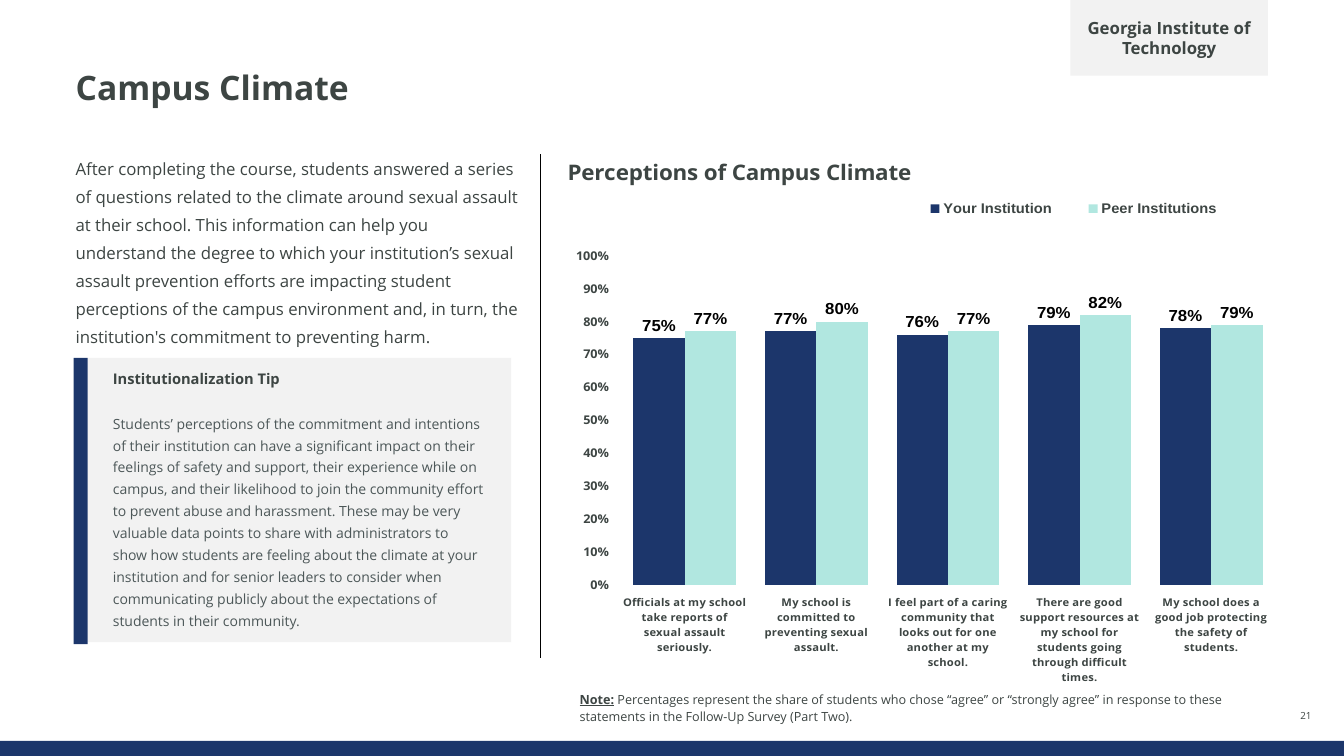
from dataclasses import dataclass, field
from typing import Any, Optional

from lxml.etree import SubElement
from pptx import Presentation
from pptx.chart.data import CategoryChartData
from pptx.dml.color import RGBColor
from pptx.enum.chart import XL_CHART_TYPE as ChartType
from pptx.enum.chart import XL_LABEL_POSITION as LabelPosition
from pptx.enum.chart import XL_LEGEND_POSITION as LegendPosition
from pptx.enum.shapes import MSO_CONNECTOR as Connector
from pptx.enum.shapes import MSO_SHAPE as Preset
from pptx.enum.text import MSO_ANCHOR as Anchor
from pptx.enum.text import MSO_AUTO_SIZE as AutoSize
from pptx.enum.text import PP_ALIGN as Align
from pptx.oxml import parse_xml
from pptx.oxml.ns import nsdecls, qn
from pptx.util import Inches, Pt

WIDTH, HEIGHT = Inches(13.333), Inches(7.5)
NAVY = RGBColor(0x1C, 0x36, 0x6B)
MINT = RGBColor(0xB1, 0xE7, 0xE0)
PALE = RGBColor(0xF2, 0xF2, 0xF2)
DARK = RGBColor(0x3D, 0x45, 0x43)
SLATE = RGBColor(0x4C, 0x57, 0x58)
BLACK = RGBColor(0, 0, 0)
SANS = "Open Sans"


@dataclass(frozen=True)
class Frame:
    """A rectangle in percent of the slide's width and height."""
    left: float
    top: float
    width: float
    height: float

    def lengths(self) -> tuple[int, int, int, int]:
        return (round(WIDTH * self.left / 100), round(HEIGHT * self.top / 100),
                round(WIDTH * self.width / 100), round(HEIGHT * self.height / 100))


@dataclass(frozen=True)
class Span:
    text: str
    size: float
    bold: bool = False
    color: RGBColor = DARK
    underline: bool = False


@dataclass(frozen=True)
class Para:
    spans: list[Span]
    format: dict[str, Any] = field(default_factory=dict)


@dataclass(frozen=True)
class Block:
    """A text box, or a filled rectangle when a fill is given."""
    frame: Frame
    paras: list[Para] = field(default_factory=list)
    fill: Optional[RGBColor] = None
    anchor: Anchor = Anchor.MIDDLE
    margins: tuple[float, float] = (0, 0)


@dataclass(frozen=True)
class Series:
    name: str
    values: list[float]
    color: RGBColor


TIGHT = {"alignment": Align.LEFT, "line_spacing": Pt(12), "space_after": Pt(2)}
BLOCKS = [
    Block(Frame(0, 98, 100, 2), fill=NAVY),
    Block(Frame(43.13, 90.8, 51.9, 4.93), [Para([
        Span("Note:", 9, True, underline=True),
        Span(" Percentages represent the share of students who chose “agree” or “strongly agree” "
             "in response to these statements in the Follow-Up Survey (Part Two).", 9),
    ], TIGHT)], anchor=Anchor.BOTTOM),
    Block(Frame(95.25, 93.47, 3.83, 2), [Para([Span("21", 7)], {"alignment": Align.CENTER})],
          anchor=Anchor.BOTTOM),
    Block(Frame(4.88, 19.33, 34.58, 27.2), [Para([Span(
        "After completing the course, students answered a series of questions related to the "
        "climate around sexual assault at their school. This information can help you understand "
        "the degree to which your institution’s sexual assault prevention efforts are impacting "
        "student perceptions of the campus environment and, in turn, the institution's commitment "
        "to preventing harm.", 12)], TIGHT | {"line_spacing": Pt(20)})],
        anchor=Anchor.TOP, margins=(0.1, 0.05)),
    Block(Frame(6.53, 47.33, 31.5, 37.6), [
        Para([Span("Institutionalization Tip", 10.5, True)], TIGHT | {"space_after": Pt(16)}),
        Para([Span(
            "Students’ perceptions of the commitment and intentions of their institution can have "
            "a significant impact on their feelings of safety and support, their experience while "
            "on campus, and their likelihood to join the community effort to prevent abuse and "
            "harassment. These may be very valuable data points to share with administrators to "
            "show how students are feeling about the climate at your institution and for senior "
            "leaders to consider when communicating publicly about the expectations of students "
            "in their community.", 10, color=SLATE)], TIGHT | {"line_spacing": 1.3}),
    ], PALE, margins=(0.25, 0)),
    Block(Frame(5.48, 47.33, 1.05, 37.87), fill=NAVY),
    Block(Frame(79.65, 0, 14.7, 10), [Para(
        [Span("Georgia Institute of Technology", 12, True)], {"alignment": Align.CENTER})],
        PALE, margins=(0.1, 0)),
]
STATEMENTS = [
    "Officials at my school take reports of sexual assault seriously.",
    "My school is committed to preventing sexual assault.",
    "I feel part of a caring community that looks out for one another at my school.",
    "There are good support resources at my school for students going through difficult times.",
    "My school does a good job protecting the safety of students.",
]
SERIES = [
    Series("Your Institution", [0.75, 0.77, 0.76, 0.79, 0.78], NAVY),
    Series("Peer Institutions", [0.77, 0.8, 0.77, 0.82, 0.79], MINT),
]


def set_all(target: Any, values: dict[str, Any]) -> None:
    for name, value in values.items():
        setattr(target, name, value)


def style_font(font: Any, size: float, bold: bool = True, color: RGBColor = DARK,
               name: str = SANS) -> None:
    set_all(font, {"name": name, "size": Pt(size), "bold": bold})
    font.color.rgb = color


def write(text_frame: Any, block: Block) -> None:
    side, end = map(Inches, block.margins)
    set_all(text_frame, {"word_wrap": True, "auto_size": AutoSize.NONE,
                         "vertical_anchor": block.anchor, "margin_left": side,
                         "margin_right": side, "margin_top": end, "margin_bottom": end})
    for index, para in enumerate(block.paras):
        paragraph = text_frame.add_paragraph() if index else text_frame.paragraphs[0]
        set_all(paragraph, para.format)
        for span in para.spans:
            run = paragraph.add_run()
            run.text = span.text
            style_font(run.font, span.size, span.bold, span.color)
            if span.underline:
                run.font.underline = True


def add_block(page: Any, block: Block) -> None:
    if block.fill is None:
        box = page.shapes.add_textbox(*block.frame.lengths())
    else:
        box = page.shapes.add_shape(Preset.RECTANGLE, *block.frame.lengths())
        box.shadow.inherit = False
        box.fill.solid()
        box.fill.fore_color.rgb = block.fill
        box.line.fill.background()
    write(box.text_frame, block)


def place(part: Any, index: int, **shares: float) -> None:
    """Fix a chart part at shares of the chart's size, as its child number index."""
    for layout in part.findall(qn("c:layout")):
        part.remove(layout)
    layout = parse_xml(f"<c:layout {nsdecls('c')}><c:manualLayout/></c:layout>")
    if "w" in shares:
        modes = {"layoutTarget": "inner"} if part.tag == qn("c:plotArea") else {}
    else:
        modes = {}
    for name, value in (modes | {"xMode": "edge", "yMode": "edge"} | shares).items():
        SubElement(layout[0], qn(f"c:{name}")).set("val", str(value))
    part.insert(index, layout)


def add_climate_chart(page: Any, frame: Frame) -> None:
    data = CategoryChartData(number_format="0%")
    data.categories = STATEMENTS
    for series in SERIES:
        data.add_series(series.name, series.values)
    chart = page.shapes.add_chart(ChartType.COLUMN_CLUSTERED, *frame.lengths(), data).chart
    style_font(chart.font, 8, False, name="Lato")

    title = chart.chart_title
    title.text_frame.text = "Perceptions of Campus Climate"
    style_font(title.text_frame.paragraphs[0].runs[0].font, 16)
    place(title._element, 1, x=0.0, y=0.01)

    chart.has_legend = True
    set_all(chart.legend, {"position": LegendPosition.TOP, "include_in_layout": False})
    style_font(chart.legend.font, 10.5, name="Arial")
    place(chart.legend._element, 1, x=0.46, y=0.09, w=0.48, h=0.06)

    for axis, size in ((chart.category_axis, 8), (chart.value_axis, 9)):
        axis.has_major_gridlines = False
        axis.format.line.fill.background()
        style_font(axis.tick_labels.font, size)
    set_all(chart.value_axis, {"minimum_scale": 0, "maximum_scale": 1, "major_unit": 0.1})
    set_all(chart.value_axis.tick_labels, {"number_format": "0%", "number_format_is_linked": False})

    plot = chart.plots[0]
    set_all(plot, {"gap_width": 56, "overlap": 0, "vary_by_categories": False})
    for bars, series in zip(plot.series, SERIES):
        bars.format.fill.solid()
        bars.format.fill.fore_color.rgb = series.color
        set_all(bars.data_labels, {"show_value": True, "position": LabelPosition.OUTSIDE_END,
                                   "number_format": "0%", "number_format_is_linked": False})
        style_font(bars.data_labels.font, 12, color=BLACK, name="Arial")
    place(chart._chartSpace.find(f".//{qn('c:plotArea')}"), 0, x=0.076, y=0.212, w=0.903, h=0.642)


def add_divider(page: Any, frame: Frame) -> None:
    left, top, width, height = frame.lengths()
    line = page.shapes.add_connector(Connector.STRAIGHT, left, top, left + width, top + height)
    line.line.color.rgb = BLACK
    line.line.width = Pt(1)
    SubElement(line._element.spPr, qn("a:effectLst"))


def main() -> None:
    deck = Presentation()
    set_all(deck, {"slide_width": WIDTH, "slide_height": HEIGHT})
    page = deck.slides.add_slide(deck.slide_layouts[5])
    heading = Block(Frame(5.63, 9.47, 88.73, 9.33), [Para(
        [Span("Campus Climate", 24, True)], {"alignment": Align.LEFT, "line_spacing": 0.9})],
        anchor=Anchor.TOP)
    title = page.shapes.title
    set_all(title, dict(zip(("left", "top", "width", "height"), heading.frame.lengths())))
    write(title.text_frame, heading)
    add_climate_chart(page, Frame(41.93, 19.47, 54.23, 71.07))
    add_divider(page, Frame(40.2, 20.4, 0, 66.67))
    for block in BLOCKS:
        add_block(page, block)
    deck.save("out.pptx")


if __name__ == "__main__":
    main()
